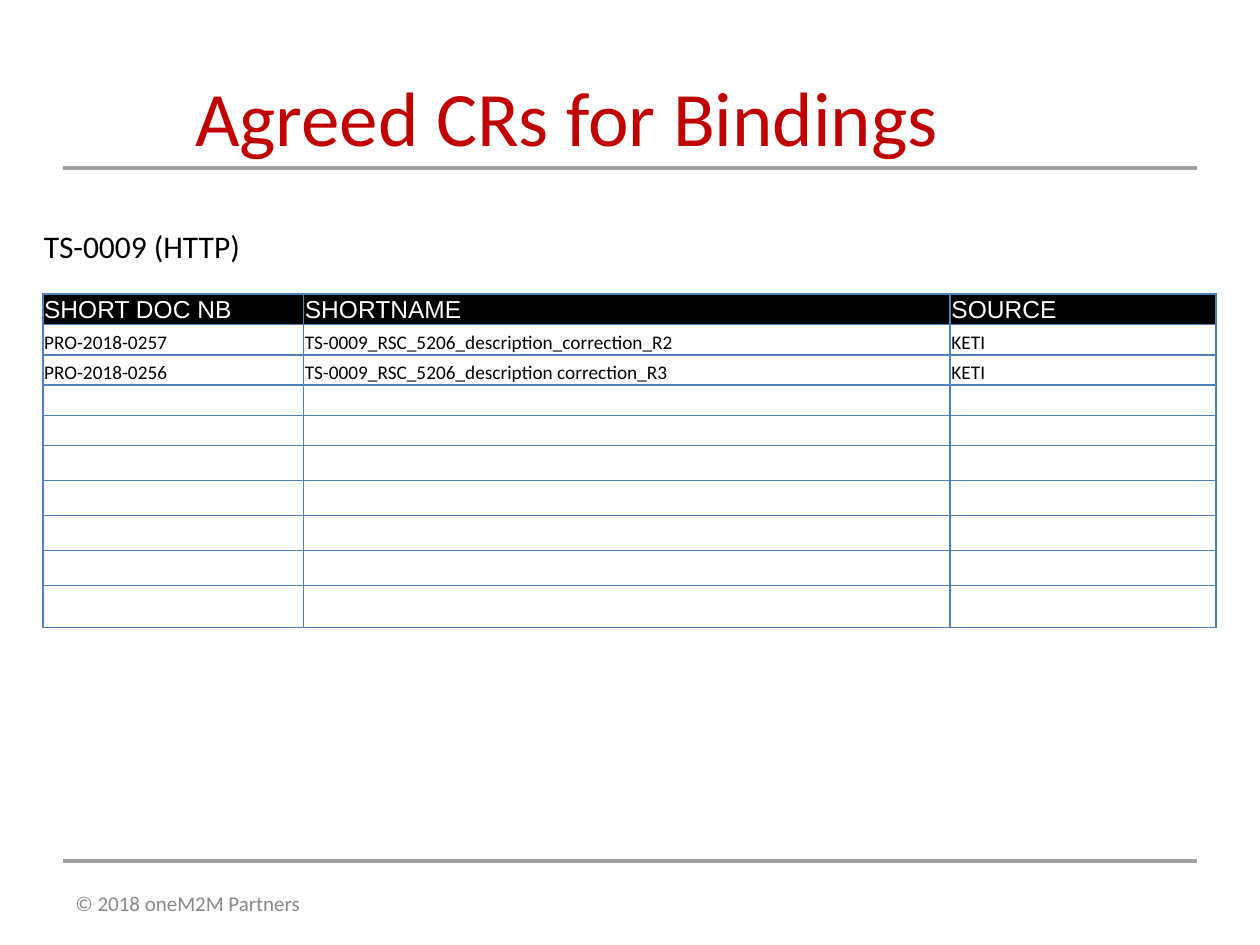
from dataclasses import dataclass

from lxml import etree
from pptx import Presentation
from pptx.dml.color import RGBColor
from pptx.enum.shapes import MSO_CONNECTOR
from pptx.enum.text import MSO_ANCHOR, MSO_AUTO_SIZE, PP_ALIGN
from pptx.oxml import parse_xml
from pptx.oxml.ns import nsdecls, qn
from pptx.util import Pt

STRAIGHT = MSO_CONNECTOR.STRAIGHT
TOP, MIDDLE, BOTTOM = MSO_ANCHOR.TOP, MSO_ANCHOR.MIDDLE, MSO_ANCHOR.BOTTOM
CENTER = PP_ALIGN.CENTER


@dataclass(frozen=True)
class Theme:
    red: str = "C00000"
    black: str = "000000"
    white: str = "FFFFFF"
    footer: str = "898989"
    rule: str = "A0A0A3"
    border: str = "4F81BD"
    body_font: str = "Calibri"
    header_font: str = "Arial"
    title_size: float = 44
    subtitle_size: float = 18
    header_size: float = 14
    footer_size: float = 12
    cell_size: float = 11


T = Theme()


def add_run(p, text, size, color, font=T.body_font):
    r = p.add_run()
    r.text = text
    r.font.size = Pt(size)
    r.font.name = font
    r.font.color.rgb = RGBColor.from_string(color)


def style_cell(cell, fill, anchor):
    """Set the fill, tight margins and four borders of a table cell."""
    cell.fill.solid()
    cell.fill.fore_color.rgb = RGBColor.from_string(fill)
    cell.vertical_anchor = anchor
    cell.margin_left = cell.margin_right = cell.margin_top = Pt(0.72)
    cell.margin_bottom = Pt(0)
    tcPr = cell._tc.get_or_add_tcPr()
    for i, side in enumerate(("lnL", "lnR", "lnT", "lnB")):
        tcPr.insert(i, parse_xml(
            f'<a:{side} {nsdecls("a")} w="{Pt(1)}"><a:solidFill>'
            f'<a:srgbClr val="{T.border}"/></a:solidFill></a:{side}>'))


prs = Presentation()
prs.slide_width, prs.slide_height = Pt(720), Pt(540)
s = prs.slides.add_slide(prs.slide_layouts[5])

# Rules above and below the content
for y in (492, 96):
    rule = s.shapes.add_connector(STRAIGHT, Pt(36), Pt(y), Pt(684), Pt(y))
    rule.line.color.rgb = RGBColor.from_string(T.rule)
    rule.line.width = Pt(1.75)
    etree.SubElement(rule._element.spPr, qn("a:effectLst"))

# Title
title = s.shapes.title
title.left, title.top, title.width, title.height = Pt(0), Pt(36), Pt(648), Pt(90)
tf = title.text_frame
tf.vertical_anchor = TOP
tf.auto_size = MSO_AUTO_SIZE.NONE
p = tf.paragraphs[0]
p.alignment = CENTER
add_run(p, "Agreed CRs for Bindings", T.title_size, T.red)

# Footer
footer = s.shapes.add_textbox(Pt(36), Pt(492), Pt(648), Pt(48))
tf = footer.text_frame
tf.word_wrap = True
tf.vertical_anchor = MIDDLE
add_run(tf.paragraphs[0], "© 2018 oneM2M Partners", T.footer_size, T.footer)

# Table of agreed change requests
rows = [
    ("SHORT DOC NB", "SHORTNAME", "SOURCE"),
    ("PRO-2018-0257", "TS-0009_RSC_5206_description_correction_R2", "KETI"),
    ("PRO-2018-0256", "TS-0009_RSC_5206_description correction_R3", "KETI"),
] + [("", "", "")] * 7
col_widths = (149, 369.5, 152)
row_heights = [17.28] * 5 + [20] * 4 + [24]

table = s.shapes.add_table(len(rows), len(col_widths), Pt(24.5), Pt(168),
                           Pt(sum(col_widths)), Pt(sum(row_heights))).table
for column, width in zip(table.columns, col_widths):
    column.width = Pt(width)
for i, (row, height, texts) in enumerate(zip(table.rows, row_heights, rows)):
    row.height = Pt(height)
    for cell, text in zip(row.cells, texts):
        p = cell.text_frame.paragraphs[0]
        if i == 0:
            style_cell(cell, T.black, MIDDLE)
            add_run(p, text, T.header_size, T.white, T.header_font)
        else:
            style_cell(cell, T.white, BOTTOM)
            if text:
                add_run(p, text, T.cell_size, T.black)
            else:
                # Keeps an empty row from growing to the default type size
                end = etree.SubElement(p._p, qn("a:endParaRPr"))
                end.set("sz", str(T.cell_size * 100))

# Heading over the table
heading = s.shapes.add_textbox(Pt(18), Pt(126), Pt(128), Pt(29))
tf = heading.text_frame
tf.word_wrap = False
tf.auto_size = MSO_AUTO_SIZE.SHAPE_TO_FIT_TEXT
add_run(tf.paragraphs[0], "TS-0009 (HTTP)", T.subtitle_size, T.black)

prs.save("out.pptx")
